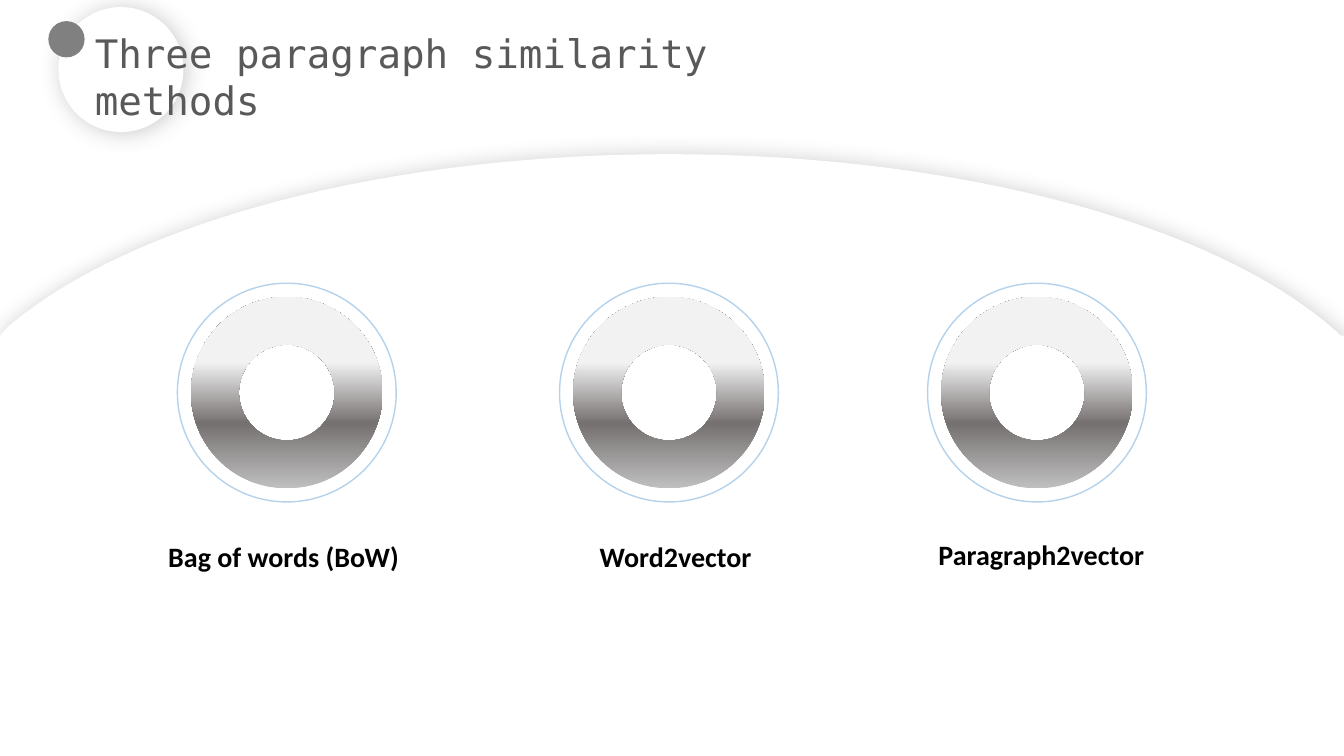
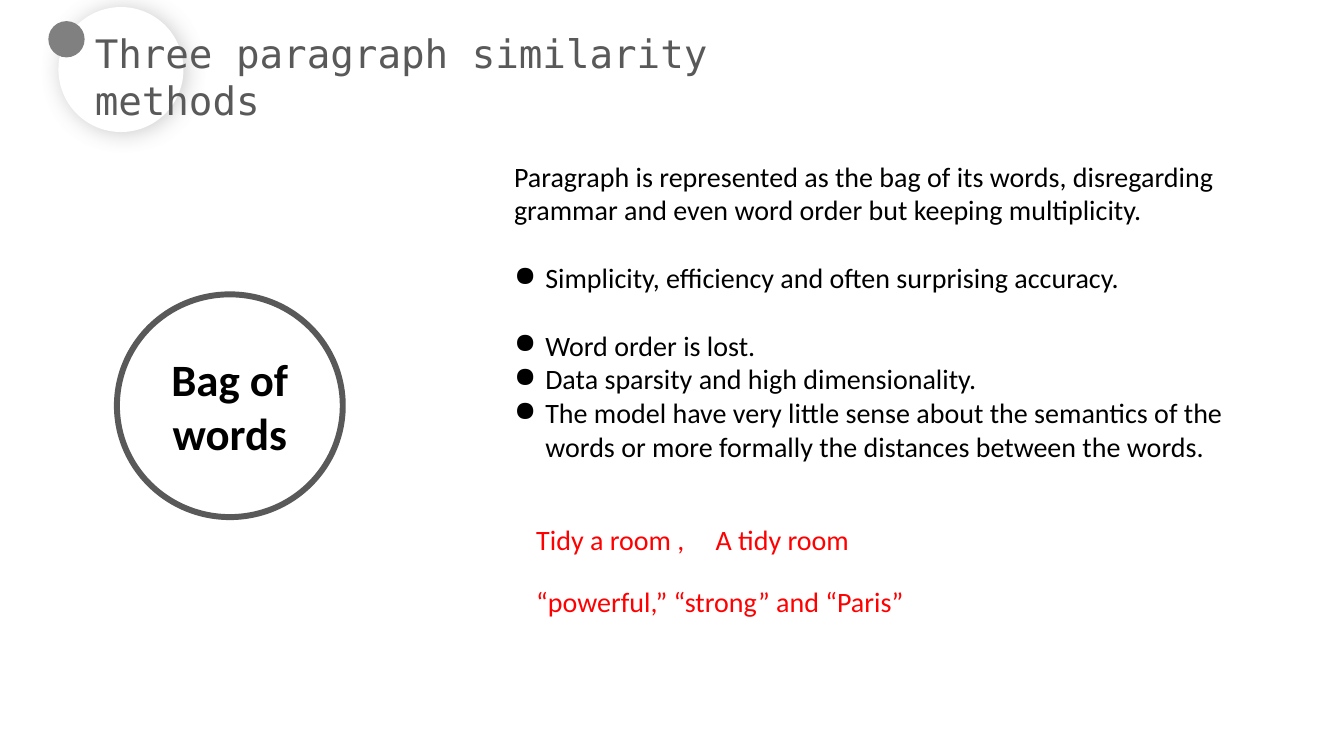
from dataclasses import dataclass

from lxml import etree
from pptx import Presentation
from pptx import util as u
from pptx.dml.color import RGBColor
from pptx.enum import shapes, text
from pptx.oxml import ns

# The slide is a grid of 75 rows; columns are as wide as rows are high.
SLIDE_W, SLIDE_H = u.Inches(13.33), u.Inches(7.5)
ROWS = 75
CELL = SLIDE_H / ROWS
COLUMNS = 133.3

WHITE, BLACK, GRAY, DARK, RED = "FFFFFF", "000000", "808080", "595959", "FF0000"
RING_LINE = "B5D2EC"
RING_STOPS = ((0, "BFBFBF"), (34, "767171"), (66, "F2F2F2"))
TITLE = "Three paragraph similarity methods"
TITLE_FONT = {"name": "DejaVu Sans Mono", "size": u.Pt(28)}
BODY_FONT = {"name": "Calibri", "size": u.Pt(20)}
CAPTION_FONT = BODY_FONT | {"bold": True}
HUB_FONT = CAPTION_FONT | {"size": u.Pt(32)}
NO_MARGINS = {f"margin_{side}": 0 for side in ("left", "top", "right", "bottom")}
BLANK_LINE = u.Pt(24.4)
BULLET_INDENT = u.Inches(0.31)


@dataclass(frozen=True)
class Box:
    """A rectangle in grid cells."""
    left: float
    top: float
    width: float
    height: float

    def emu(self) -> list[int]:
        return [cells(v) for v in (self.left, self.top, self.width, self.height)]

    def inset(self, gap: float) -> "Box":
        return Box(self.left + gap, self.top + gap,
                   self.width - 2 * gap, self.height - 2 * gap)


@dataclass(frozen=True)
class Method:
    caption: str
    ring_left: float
    caption_box: Box


@dataclass(frozen=True)
class Line:
    wording: str
    bulleted: bool = False
    gap_before: bool = False
    tab: float = 0


METHODS = (
    Method("Bag of words (BoW)", 17.6, Box(15.7, 53, 25.5, 7.7)),
    Method("Word2vector", 55.5, Box(58.5, 53, 19, 4.4)),
    Method("Paragraph2vector", 92, Box(92.1, 52.8, 23, 4.4)),
)
DESCRIPTION = (
    Line("Paragraph is represented as the bag of its words, disregarding grammar "
         "and even word order but keeping multiplicity."),
    Line("Simplicity, efficiency and often surprising accuracy.", True, True),
    Line("Word order is lost.", True, True),
    Line("Data sparsity and high dimensionality.", True),
    Line("The model have very little sense about the semantics of the words or more "
         "formally the distances between the words.", True),
)
EXAMPLES = (
    (Box(52.2, 51.3, 60.6, 4.4), Line("Tidy a room ,\tA tidy room", tab=17.8)),
    (Box(52.2, 57.5, 64.3, 4.4), Line("“powerful,” “strong” and “Paris”")),
)


def cells(count: float) -> int:
    return round(count * CELL)


def rgb(code: str) -> RGBColor:
    return RGBColor.from_string(code)


def assign(target, values: dict) -> None:
    for key, value in values.items():
        setattr(target, key, value)


def add_child(parent, tag: str, **attributes):
    return etree.SubElement(parent, ns.qn(tag),
                            {key: str(value) for key, value in attributes.items()})


def paint(shape, fill: str = "", line: str = "", weight: float = 1) -> None:
    shape.shadow.inherit = False
    if fill:
        shape.fill.solid()
        shape.fill.fore_color.rgb = rgb(fill)
    else:
        shape.fill.background()
    if line:
        shape.line.color.rgb = rgb(line)
        shape.line.width = u.Pt(weight)
    else:
        shape.line.fill.background()


def add_halo(shape) -> None:
    """Give the shape a soft gray outer shadow."""
    effects = shape._element.spPr.find(ns.qn("a:effectLst"))
    shadow = add_child(effects, "a:outerShdw", blurRad=u.Pt(16), dist=u.Pt(2),
                       dir=30 * 60000, algn="ctr", rotWithShape=0)
    color = add_child(shadow, "a:srgbClr", val=GRAY)
    add_child(color, "a:alpha", val=40000)


def add_preset(slide, kind, box: Box, **style):
    shape = slide.shapes.add_shape(kind, *box.emu())
    paint(shape, **style)
    return shape


def shade_ring(ring) -> None:
    """Fill with three gray stops, running from bottom to top."""
    ring.fill.gradient()
    ring.fill.gradient_angle = 90
    stops = ring._element.spPr.find(".//" + ns.qn("a:gsLst"))
    for stop in list(stops):
        stops.remove(stop)
    for percent, code in RING_STOPS:
        stop = add_child(stops, "a:gs", pos=percent * 1000)
        add_child(stop, "a:srgbClr", val=code)


def write_line(paragraph, line: Line, font: dict, color: str) -> None:
    paragraph.text = line.wording
    assign(paragraph.runs[0].font, font)
    paragraph.runs[0].font.color.rgb = rgb(color)
    if line.gap_before:
        paragraph.space_before = BLANK_LINE
    properties = paragraph._p.get_or_add_pPr()
    if line.bulleted:
        properties.set("marL", str(BULLET_INDENT))
        properties.set("indent", str(-BULLET_INDENT))
        add_child(properties, "a:buChar", char="●")
    if line.tab:
        stops = add_child(properties, "a:tabLst")
        add_child(stops, "a:tab", pos=cells(line.tab), algn="l")


def add_text(slide, box: Box, lines, font: dict, color: str = BLACK, **frame_format):
    frame = slide.shapes.add_textbox(*box.emu()).text_frame
    assign(frame, {"word_wrap": True,
                   "auto_size": text.MSO_AUTO_SIZE.SHAPE_TO_FIT_TEXT} | frame_format)
    for index, line in enumerate(lines):
        paragraph = frame.add_paragraph() if index else frame.paragraphs[0]
        write_line(paragraph, line, font, color)


def add_title(slide, width: float) -> None:
    oval = shapes.MSO_SHAPE.OVAL
    add_halo(add_preset(slide, oval, Box(5.8, 0.7, 12.4, 12.4), fill=WHITE))
    add_preset(slide, oval, Box(4.8, 2.1, 3.6, 3.6), fill=GRAY)
    add_text(slide, Box(9.4, 5.2, width, 4.7), [Line(TITLE)], TITLE_FONT, DARK,
             vertical_anchor=text.MSO_ANCHOR.MIDDLE, **NO_MARGINS)


def bezier(points, steps: int = 40) -> list[tuple[float, float]]:
    """Sample a cubic curve, start point included."""
    curve = []
    for step in range(steps + 1):
        t = step / steps
        weights = ((1 - t) ** 3, 3 * t * (1 - t) ** 2, 3 * t * t * (1 - t), t ** 3)
        curve.append(tuple(sum(w * p[axis] for w, p in zip(weights, points))
                           for axis in (0, 1)))
    return curve


def add_dome(slide) -> None:
    center, top, shoulder, edge = 66.4, 15.3, 32.5, 33.3
    right_half = bezier([(center, top), (95.3, top), (120.3, 22.3), (132.1, shoulder)])
    left_half = [(2 * center - x, y) for x, y in reversed(right_half)]
    outline = right_half + [(133, edge), (133.5, edge), (133.5, ROWS),
                            (0, ROWS), (0, edge)] + left_half
    outline = [(cells(x), cells(y)) for x, y in outline]
    builder = slide.shapes.build_freeform(*outline[0])
    builder.add_line_segments(outline[1:], close=True)
    dome = builder.convert_to_shape()
    paint(dome, fill=WHITE)
    add_halo(dome)


def add_method(slide, method: Method) -> None:
    orbit = Box(method.ring_left, 28.1, 21.7, 21.7)
    shade_ring(add_preset(slide, shapes.MSO_SHAPE.DONUT, orbit.inset(1.35)))
    add_preset(slide, shapes.MSO_SHAPE.OVAL, orbit, line=RING_LINE)
    add_text(slide, method.caption_box, [Line(method.caption)], CAPTION_FONT)


def build_overview(slide) -> None:
    add_dome(slide)
    add_title(slide, 72.3)
    for method in METHODS:
        add_method(slide, method)


def build_bag_of_words(slide) -> None:
    add_title(slide, 67.4)
    hub = add_preset(slide, shapes.MSO_SHAPE.OVAL, Box(11.6, 29.2, 22.4, 22.1),
                     line=DARK, weight=4.25)
    assign(hub.text_frame, {"word_wrap": True,
                            "vertical_anchor": text.MSO_ANCHOR.MIDDLE})
    label = hub.text_frame.paragraphs[0]
    label.alignment = text.PP_ALIGN.CENTER
    write_line(label, Line("Bag of words"), HUB_FONT, BLACK)
    add_text(slide, Box(50, 15.3, 78, 34.3), DESCRIPTION, BODY_FONT)
    for box, line in EXAMPLES:
        add_text(slide, box, [line], BODY_FONT, RED)


def main() -> None:
    deck = Presentation()
    assign(deck, {"slide_width": SLIDE_W, "slide_height": SLIDE_H})
    blank = deck.slide_layouts[6]
    for build in (build_overview, build_bag_of_words):
        build(deck.slides.add_slide(blank))
    deck.save("out.pptx")


if __name__ == "__main__":
    main()
